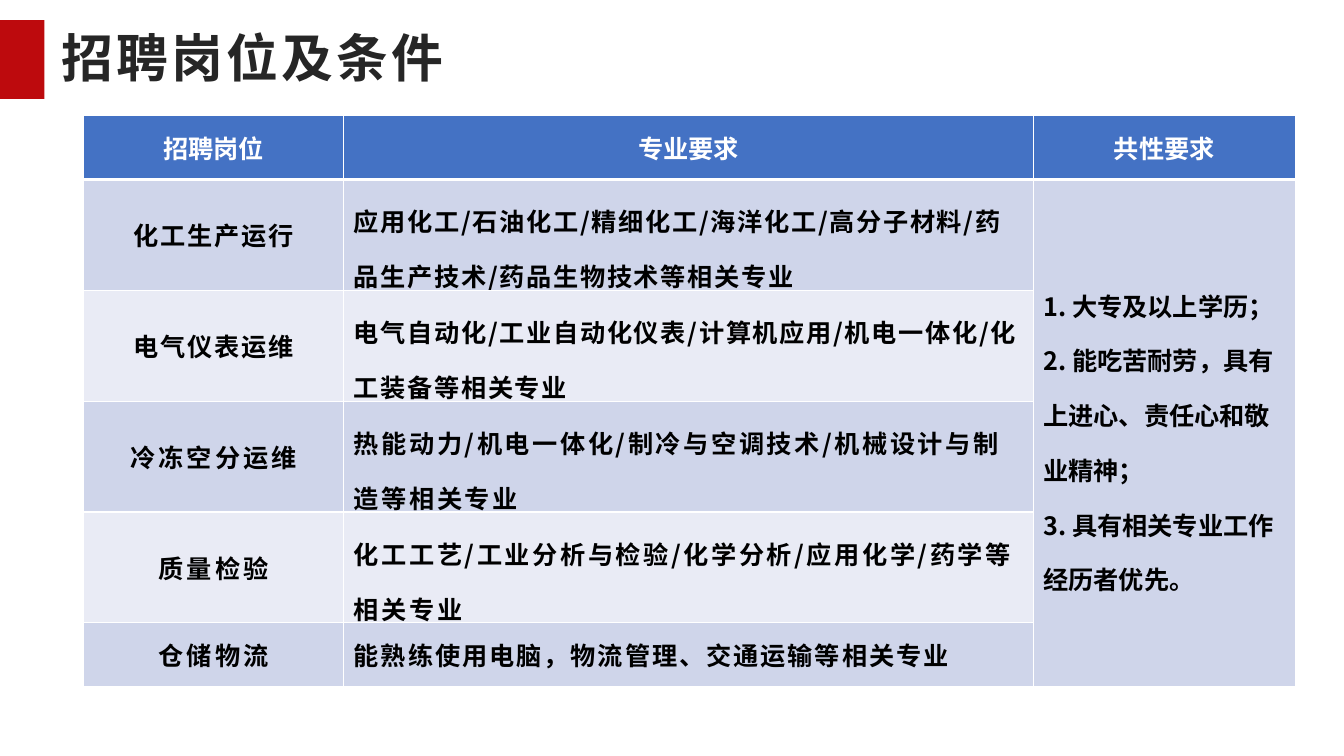
"""Builds a slide that lists recruitment positions and their requirements."""
from dataclasses import dataclass

from lxml.etree import SubElement
from pptx import Presentation
from pptx.dml.color import RGBColor
from pptx.enum.shapes import MSO_SHAPE as Preset
from pptx.enum.text import MSO_ANCHOR as Anchor, PP_ALIGN as Align
from pptx.oxml.ns import qn
from pptx.slide import Slide
from pptx.table import _Cell as Cell
from pptx.text.text import TextFrame
from pptx.util import Emu, Inches, Pt

SLIDE_WIDTH, SLIDE_HEIGHT = Inches(13.33), Inches(7.5)
FONT = "Noto Sans CJK SC"
RED, BLUE, WHITE, BLACK, CHARCOAL = "BD0A0D", "4472C4", "FFFFFF", "000000", "262626"
BANDS = ("CFD5EA", "E9EBF5")
COLUMN_SHARES = (19.35, 51.3, 19.5)
ROW_SHARES = (8.4, 14.67, 14.67, 14.67, 14.67, 8.4)
HEADINGS = ("招聘岗位", "专业要求", "共性要求")
COMMON_REQUIREMENTS = (
    "1. 大专及以上学历；",
    "2. 能吃苦耐劳，具有上进心、责任心和敬业精神；",
    "3. 具有相关专业工作经历者优先。",
)


@dataclass(frozen=True)
class TextStyle:
    size: float = 18
    color: str = BLACK
    tracking: float = 0
    align: Align = Align.LEFT
    line_spacing: float = 1


@dataclass(frozen=True)
class Position:
    name: str
    majors: str
    name_tracking: float
    majors_tracking: float
    line_spacing: float = 1.5


POSITIONS = (
    Position("化工生产运行", "应用化工/石油化工/精细化工/海洋化工/高分子材料/药品生产技术/药品生物技术等相关专业", 1.2, 1.2),
    Position("电气仪表运维", "电气自动化/工业自动化仪表/计算机应用/机电一体化/化工装备等相关专业", 1.2, 1.2),
    Position("冷冻空分运维", "热能动力/机电一体化/制冷与空调技术/机械设计与制造等相关专业", 2.2, 1.8),
    Position("质量检验", "化工工艺/工业分析与检验/化学分析/应用化学/药学等相关专业", 2.2, 1.8),
    Position("仓储物流", "能熟练使用电脑，物流管理、交通运输等相关专业", 2.2, 1.4, 1),
)


def across(percent: float) -> Emu:
    return Emu(round(SLIDE_WIDTH * percent / 100))


def down(percent: float) -> Emu:
    return Emu(round(SLIDE_HEIGHT * percent / 100))


def color(value: str) -> RGBColor:
    return RGBColor.from_string(value)


def write(frame: TextFrame, lines: tuple[str, ...], style: TextStyle) -> None:
    frame.word_wrap = True
    for index, line in enumerate(lines):
        paragraph = frame.add_paragraph() if index else frame.paragraphs[0]
        paragraph.text = line
        paragraph.alignment = style.align
        paragraph.line_spacing = style.line_spacing
        font = paragraph.font
        font.name, font.size, font.bold = FONT, Pt(style.size), True
        font.color.rgb = color(style.color)
        properties = paragraph._p.pPr.find(qn("a:defRPr"))
        properties.set("spc", str(round(style.tracking * 100)))
        SubElement(properties, qn("a:ea"), typeface=FONT)


def border(cell: Cell, bottom_width: float) -> None:
    widths = {"L": 1, "R": 1, "T": 1, "B": bottom_width}
    for side, width in widths.items():
        line = SubElement(cell._tc.get_or_add_tcPr(), qn(f"a:ln{side}"), w=str(Pt(width)))
        fill = SubElement(line, qn("a:solidFill"))
        SubElement(fill, qn("a:srgbClr"), val=WHITE)


def fill_cell(cell: Cell, lines: tuple[str, ...], background: str, style: TextStyle) -> None:
    cell.vertical_anchor = Anchor.MIDDLE
    cell.fill.solid()
    cell.fill.fore_color.rgb = color(background)
    write(cell.text_frame, lines, style)


def add_heading(slide: Slide) -> None:
    marker = slide.shapes.add_shape(Preset.RECTANGLE, 0, down(2.67), across(3.3), down(10.4))
    marker.shadow.inherit = False
    marker.fill.solid()
    marker.fill.fore_color.rgb = color(RED)
    marker.line.fill.background()
    title = slide.shapes.add_textbox(across(4.05), down(4.53), across(32.26), down(7.47))
    frame = title.text_frame
    frame.vertical_anchor = Anchor.BOTTOM
    frame.margin_left = frame.margin_right = Inches(0.07)
    frame.margin_top = frame.margin_bottom = Inches(0.03)
    write(frame, ("招聘岗位及条件",), TextStyle(37, CHARCOAL, 2.4, line_spacing=0.8))


def add_requirements(slide: Slide) -> None:
    table = slide.shapes.add_table(
        len(ROW_SHARES), len(COLUMN_SHARES), across(6.23), down(15.33),
        across(sum(COLUMN_SHARES)), down(sum(ROW_SHARES)),
    ).table
    for column, share in zip(table.columns, COLUMN_SHARES):
        column.width = across(share)
    for index, (row, share) in enumerate(zip(table.rows, ROW_SHARES)):
        row.height = down(share)
        for cell in row.cells:
            border(cell, 1 if index else 3)
    for column, heading in enumerate(HEADINGS):
        fill_cell(table.cell(0, column), (heading,), BLUE, TextStyle(color=WHITE, align=Align.CENTER))
    for row, position in enumerate(POSITIONS, start=1):
        band = BANDS[(row - 1) % len(BANDS)]
        name_style = TextStyle(tracking=position.name_tracking, align=Align.CENTER)
        majors_style = TextStyle(tracking=position.majors_tracking, line_spacing=position.line_spacing)
        fill_cell(table.cell(row, 0), (position.name,), band, name_style)
        fill_cell(table.cell(row, 1), (position.majors,), band, majors_style)
    common = table.cell(1, 2)
    common.merge(table.cell(len(POSITIONS), 2))
    fill_cell(common, COMMON_REQUIREMENTS, BANDS[0], TextStyle(line_spacing=1.5))


def main() -> None:
    presentation = Presentation()
    presentation.slide_width, presentation.slide_height = SLIDE_WIDTH, SLIDE_HEIGHT
    slide = presentation.slides.add_slide(presentation.slide_layouts[6])
    add_heading(slide)
    add_requirements(slide)
    presentation.save("out.pptx")


if __name__ == "__main__":
    main()
